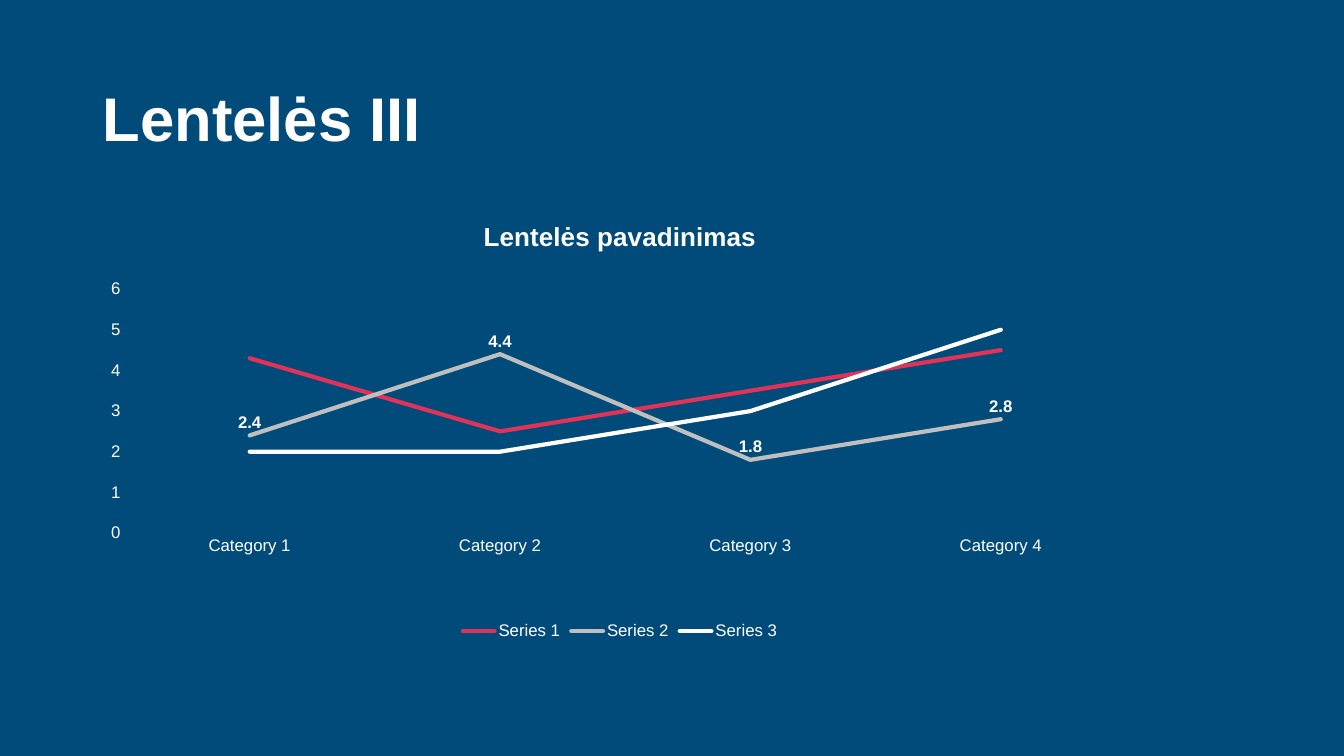
import dataclasses

import lxml.etree
import pptx
import pptx.chart.data
import pptx.dml.color
import pptx.enum.chart
import pptx.enum.text
import pptx.oxml.ns
import pptx.util

Cm = pptx.util.Cm
Pt = pptx.util.Pt
qn = pptx.oxml.ns.qn


def rgb(code):
    """Return a colour object for a hex code."""
    return pptx.dml.color.RGBColor.from_string(code)


def apply(target, values):
    """Set each attribute of the target from a dict of format values."""
    for name, value in values.items():
        setattr(target, name, value)


@dataclasses.dataclass(frozen=True)
class Theme:
    """Colours, font and type sizes of the deck."""

    background: str = "004B79"
    text: str = "FFFFFF"
    series: tuple = ("E03357", "BFBFBF", "FFFFFF")
    font: str = "Arial"
    heading: float = 44
    chart_title: float = 18.6
    label: float = 12
    line: float = 3


class SlideBuilder:
    """Draws styled elements on the current slide."""

    def __init__(self, page, theme):
        """Keep the slide and the theme, and fill the background."""
        self.page = page
        self.theme = theme
        page.background.fill.solid()
        page.background.fill.fore_color.rgb = rgb(theme.background)

    def style_font(self, font, size, bold=False):
        """Give a font the theme face and colour."""
        apply(font, {"name": self.theme.font, "size": Pt(size), "bold": bold})
        font.color.rgb = rgb(self.theme.text)

    def heading(self, text, left, top, width, height):
        """Add the slide heading."""
        box = self.page.shapes.add_textbox(Cm(left), Cm(top), Cm(width), Cm(height))
        apply(box.text_frame, {
            "word_wrap": True,
            "margin_top": Cm(0.24),
            "vertical_anchor": pptx.enum.text.MSO_ANCHOR.TOP,
        })
        para = box.text_frame.paragraphs[0]
        para.line_spacing = 0.9
        span = para.add_run()
        span.text = text
        self.style_font(span.font, self.theme.heading, bold=True)

    def line_chart(self, title, categories, series, labelled, plot_area,
                   left, top, width, height):
        """Add a line chart with a title, a legend and labels on one series."""
        data = pptx.chart.data.CategoryChartData()
        data.categories = categories
        for name, values in series.items():
            data.add_series(name, values)
        frame = self.page.shapes.add_chart(
            pptx.enum.chart.XL_CHART_TYPE.LINE,
            Cm(left), Cm(top), Cm(width), Cm(height), data)
        chart = frame.chart
        self.style_font(chart.font, self.theme.label)
        self.chart_title(chart, title)
        self.chart_legend(chart)
        for axis in (chart.category_axis, chart.value_axis):
            self.chart_axis(axis)
        apply(chart.value_axis, {
            "minimum_scale": 0, "maximum_scale": 6, "major_unit": 1})
        chart.plots[0].vary_by_categories = False
        for line, color in zip(chart.plots[0].series, self.theme.series):
            self.chart_line(line, color)
            if line.name == labelled:
                self.value_labels(line)
        area = chart._chartSpace.find(".//" + qn("c:plotArea"))
        self.round_line_ends(area)
        self.place_plot(area, plot_area)

    def chart_title(self, chart, text):
        """Write the chart title."""
        chart.has_title = True
        span = chart.chart_title.text_frame.paragraphs[0].add_run()
        span.text = text
        self.style_font(span.font, self.theme.chart_title, bold=True)

    def chart_legend(self, chart):
        """Put the legend below the plot."""
        chart.has_legend = True
        apply(chart.legend, {
            "position": pptx.enum.chart.XL_LEGEND_POSITION.BOTTOM,
            "include_in_layout": False,
        })
        self.style_font(chart.legend.font, self.theme.label)

    def chart_axis(self, axis):
        """Leave only the tick labels of an axis."""
        no_mark = pptx.enum.chart.XL_TICK_MARK.NONE
        apply(axis, {
            "has_major_gridlines": False,
            "major_tick_mark": no_mark,
            "minor_tick_mark": no_mark,
        })
        axis.format.line.fill.background()
        self.style_font(axis.tick_labels.font, self.theme.label)

    def chart_line(self, line, color):
        """Style one series as a straight line without markers."""
        line.smooth = False
        line.marker.style = pptx.enum.chart.XL_MARKER_STYLE.NONE
        line.format.line.width = Pt(self.theme.line)
        line.format.line.color.rgb = rgb(color)

    def value_labels(self, line):
        """Show the values above a series."""
        labels = line.data_labels
        apply(labels, {
            "show_value": True,
            "position": pptx.enum.chart.XL_LABEL_POSITION.ABOVE,
        })
        self.style_font(labels.font, self.theme.label, bold=True)

    def round_line_ends(self, area):
        """Give the series lines round ends."""
        for series in area.iter(qn("c:ser")):
            series.find(qn("c:spPr")).find(qn("a:ln")).set("cap", "rnd")

    def place_plot(self, area, fractions):
        """Fix the inner plot area as fractions of the chart."""
        for old in area.findall(qn("c:layout")):
            area.remove(old)
        layout = lxml.etree.Element(qn("c:layout"))
        area.insert(0, layout)
        manual = lxml.etree.SubElement(layout, qn("c:manualLayout"))
        settings = {"layoutTarget": "inner", "xMode": "edge", "yMode": "edge"}
        settings.update(zip("xywh", fractions))
        for name, value in settings.items():
            lxml.etree.SubElement(manual, qn("c:" + name)).set("val", str(value))


def main():
    """Build the slide and save the deck."""
    deck = pptx.Presentation()
    apply(deck, {"slide_width": Cm(33.87), "slide_height": Cm(19.05)})
    page = deck.slides.add_slide(deck.slide_layouts[6])
    builder = SlideBuilder(page, Theme())
    builder.heading("Lentelės III", 2.34, 1.98, 24.82, 3.68)
    builder.line_chart(
        title="Lentelės pavadinimas",
        categories=[f"Category {number}" for number in range(1, 5)],
        series={
            "Series 1": (4.3, 2.5, 3.5, 4.5),
            "Series 2": (2.4, 4.4, 1.8, 2.8),
            "Series 3": (2, 2, 3, 5),
        },
        labelled="Series 2",
        plot_area=(0.03, 0.2, 0.95, 0.55),
        left=2.34, top=5.05, width=26.57, height=11.18)
    deck.save("out.pptx")


if __name__ == "__main__":
    main()
